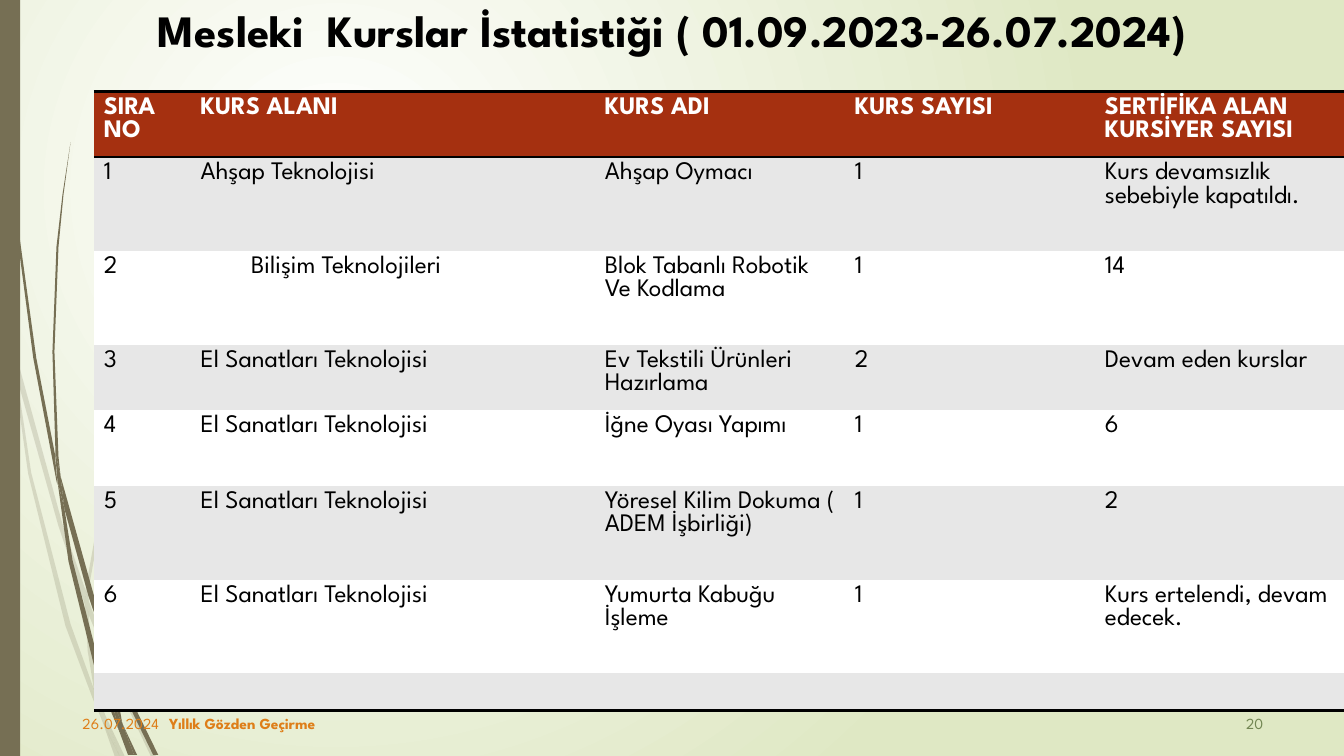
from dataclasses import dataclass

from lxml import etree
from pptx import Presentation
from pptx.dml.color import RGBColor
from pptx.enum.shapes import MSO_SHAPE
from pptx.enum.text import MSO_ANCHOR, MSO_AUTO_SIZE, PP_ALIGN
from pptx.oxml.ns import qn
from pptx.util import Emu, Pt

RECTANGLE = MSO_SHAPE.RECTANGLE
MIDDLE = MSO_ANCHOR.MIDDLE
NO_AUTOFIT = MSO_AUTO_SIZE.NONE
LEFT, CENTER, RIGHT = PP_ALIGN.LEFT, PP_ALIGN.CENTER, PP_ALIGN.RIGHT
TITLE_ONLY = 5
PLAIN_TABLE = "{2D5ABB26-0587-4C30-8999-92F81FD0307C}"


def px(length):
    return Emu(length * 9144)


@dataclass(frozen=True)
class Theme:
    font: str = "League Spartan"
    title_size: int = 32
    table_size: int = 18
    footer_size: int = 11
    rule_width: int = 2
    ink: str = "000000"
    paper: str = "FFFFFF"
    meadow: str = "DFE8C4"
    stem: str = "766F54"
    rust: str = "A53010"
    band: str = "E7E7E7"
    orange: str = "DE7E18"
    moss: str = "728653"


PALE_BLADES = [
    [(11, 350), (9, 322), (0, 282), (0, 299), (10, 344)],
    [(58, 522), (84, 599), (85, 586), (62, 520), (14, 345), (17, 376)],
    [(92, 607), (88, 596), (88, 610), (123, 694), (150, 751), (155, 751), (127, 692)],
    [(119, 751), (124, 751), (105, 711)],
    [(93, 683), (70, 619), (31, 469), (17, 376), (11, 350), (28, 470), (65, 621),
     (92, 693), (101, 714), (99, 707)],
    [(84, 599), (87, 646), (93, 683), (96, 692), (105, 711), (103, 706), (91, 646),
     (88, 610), (88, 608)],
    [(88, 584), (110, 462), (160, 349), (229, 245), (268, 198), (290, 175), (312, 154),
     (312, 153), (289, 175), (268, 197), (228, 244), (158, 348), (107, 461), (85, 584),
     (85, 586), (88, 596)],
    [(101, 714), (114, 751), (119, 751)],
    [(88, 608), (88, 610), (88, 596), (85, 586), (84, 599)],
    [(96, 692), (93, 683), (99, 707), (101, 714), (119, 751), (105, 711)],
]

DARK_BLADES = [
    [(7, 110), (17, 233), (33, 355), (56, 477), (57, 481), (55, 457), (55, 453),
     (36, 355), (19, 232), (8, 109), (5, 48), (4, 0), (3, 0), (4, 48)],
    [(88, 592), (106, 645), (106, 633), (106, 631), (93, 590), (60, 472), (64, 505)],
    [(113, 649), (110, 641), (111, 656), (132, 708), (152, 749), (157, 749), (136, 706)],
    [(110, 691), (98, 657), (72, 556), (64, 505), (57, 477), (68, 557), (93, 659),
     (111, 708), (117, 722), (116, 717)],
    [(60, 472), (58, 453), (54, 349), (58, 245), (63, 193), (70, 141), (62, 193),
     (56, 245), (52, 349), (55, 449)],
    [(133, 749), (136, 749), (122, 719)],
    [(57, 477), (64, 505), (60, 472), (55, 449), (55, 453)],
    [(111, 633), (125, 552), (158, 476), (205, 406), (231, 374), (245, 359), (261, 344),
     (260, 344), (245, 358), (231, 373), (204, 405), (156, 474), (122, 551), (106, 631),
     (110, 641)],
    [(117, 722), (127, 749), (131, 749)],
    [(106, 645), (110, 691), (116, 706), (122, 719), (121, 716), (111, 656), (109, 651)],
    [(106, 645), (109, 651), (111, 656), (110, 641), (106, 631), (106, 633)],
    [(116, 706), (110, 691), (116, 717), (117, 722), (130, 749), (133, 749), (122, 719)],
]

CRAFTS = "El Sanatları Teknolojisi"
COURSES = [
    ("SIRA NO", "KURS ALANI", "KURS ADI", "KURS SAYISI", "SERTİFİKA ALAN KURSİYER SAYISI"),
    ("1", "Ahşap Teknolojisi", "Ahşap Oymacı", "1", "Kurs devamsızlık sebebiyle kapatıldı."),
    ("2", "Bilişim Teknolojileri", "Blok Tabanlı Robotik Ve Kodlama", "1", "14"),
    ("3", CRAFTS, "Ev Tekstili Ürünleri Hazırlama", "2", "Devam eden kurslar"),
    ("4", CRAFTS, "İğne Oyası Yapımı", "1", "6"),
    ("5", CRAFTS, "Yöresel Kilim Dokuma ( ADEM İşbirliği)", "1", "2"),
    ("6", CRAFTS, "Yumurta Kabuğu İşleme", "1", "Kurs ertelendi, devam edecek."),
    ("",) * 5,
]
COLUMN_WIDTHS = [96, 401, 248, 248, 248]
ROW_HEIGHTS = [65, 93, 93, 65, 75, 93, 93, 37]


class SlideBuilder:
    def __init__(self, slide, theme):
        self.slide = slide
        self.theme = theme

    def assign(self, target, **values):
        for name, value in values.items():
            setattr(target, name, value)

    def background(self):
        fill = self.slide.background.fill
        fill.gradient()
        for stop, position, color in zip(fill.gradient_stops, (0, 1), (self.theme.paper, self.theme.meadow)):
            stop.position = position
            stop.color.rgb = RGBColor.from_string(color)
        gradient = self.slide._element.find(".//" + qn("a:gradFill"))
        gradient.remove(gradient.find(qn("a:lin")))
        circle = etree.SubElement(gradient, qn("a:path"), {"path": "circle"})
        focus = {"l": "50000", "t": "50000", "r": "100000", "b": "100000"}
        etree.SubElement(circle, qn("a:fillToRect"), focus)

    def paint(self, shape, color, opacity=100):
        shape.shadow.inherit = False
        shape.line.fill.background()
        shape.fill.solid()
        shape.fill.fore_color.rgb = RGBColor.from_string(color)
        if opacity < 100:
            tint = shape._element.spPr.find(".//" + qn("a:srgbClr"))
            etree.SubElement(tint, qn("a:alpha"), {"val": str(opacity * 1000)})

    def blade(self, points, opacity):
        outline = self.slide.shapes.build_freeform(*points[0], scale=px(1))
        outline.add_line_segments(points[1:], close=True)
        self.paint(outline.convert_to_shape(), self.theme.stem, opacity)

    def bar(self, *box):
        self.paint(self.slide.shapes.add_shape(RECTANGLE, *map(px, box)), self.theme.stem)

    def put_text(self, frame, text, size, color, bold=False, align=LEFT):
        paragraph = frame.paragraphs[0]
        paragraph.alignment = align
        run = paragraph.add_run()
        run.text = text
        self.assign(run.font, name=self.theme.font, size=Pt(size), bold=bold)
        run.font.color.rgb = RGBColor.from_string(color)

    def title(self, text, left, top, width, height):
        heading = self.slide.shapes.title
        self.assign(heading, left=px(left), top=px(top), width=px(width), height=px(height))
        self.assign(heading.text_frame, word_wrap=True, auto_size=NO_AUTOFIT, vertical_anchor=MIDDLE)
        self.put_text(heading.text_frame, text, self.theme.title_size, self.theme.ink, True, CENTER)

    def footer(self, text, left, width, color, bold=False, align=LEFT):
        frame = self.slide.shapes.add_textbox(px(left), px(698), px(width), px(40)).text_frame
        self.assign(frame, word_wrap=True, auto_size=NO_AUTOFIT, vertical_anchor=MIDDLE)
        self.put_text(frame, text, self.theme.footer_size, color, bold, align)

    def rule(self, cell, side):
        line = etree.Element(qn("a:" + side), {"w": str(int(Pt(self.theme.rule_width)))})
        ink = etree.SubElement(line, qn("a:solidFill"))
        etree.SubElement(ink, qn("a:srgbClr"), {"val": self.theme.ink})
        cell._tc.get_or_add_tcPr().insert(0, line)

    def table(self, rows, widths, heights, left, top):
        box = map(px, (left, top, sum(widths), sum(heights)))
        grid = self.slide.shapes.add_table(len(rows), len(widths), *box).table
        grid._tbl.tblPr.find(qn("a:tableStyleId")).text = PLAIN_TABLE
        for column, width in zip(grid.columns, widths):
            column.width = px(width)
        for number, (row, height, texts) in enumerate(zip(grid.rows, heights, rows)):
            row.height = px(height)
            header = number == 0
            fill = self.theme.rust if header else (self.theme.paper, self.theme.band)[number % 2]
            color = self.theme.paper if header else self.theme.ink
            for cell, text in zip(row.cells, texts):
                cell.fill.solid()
                cell.fill.fore_color.rgb = RGBColor.from_string(fill)
                if text:
                    self.put_text(cell.text_frame, text, self.theme.table_size, color, header)
                else:
                    self.assign(cell, margin_top=0, margin_bottom=0)
                if header or number == len(rows) - 1:
                    self.rule(cell, "lnB")
                if header:
                    self.rule(cell, "lnT")
        return grid


def main():
    deck = Presentation()
    deck.slide_width, deck.slide_height = px(1333), px(750)
    theme = Theme()
    page = SlideBuilder(deck.slides.add_slide(deck.slide_layouts[TITLE_ONLY]), theme)
    page.background()
    for blades, opacity in ((PALE_BLADES, 20), (DARK_BLADES, 100)):
        for points in blades:
            page.blade(points, opacity)
    page.bar(0, 0, 20, 750)
    page.footer("26.07.2024", 72, 300, theme.orange)
    page.footer("Yıllık Gözden Geçirme", 158, 450, theme.orange, bold=True)
    page.footer("20", 963, 300, theme.moss, align=RIGHT)
    page.title("Mesleki  Kurslar İstatistiği ( 01.09.2023-26.07.2024)", 92, 0, 1150, 58)
    courses = page.table(COURSES, COLUMN_WIDTHS, ROW_HEIGHTS, 93, 91)
    courses.cell(2, 1).margin_left = px(60)
    deck.save("out.pptx")


if __name__ == "__main__":
    main()
